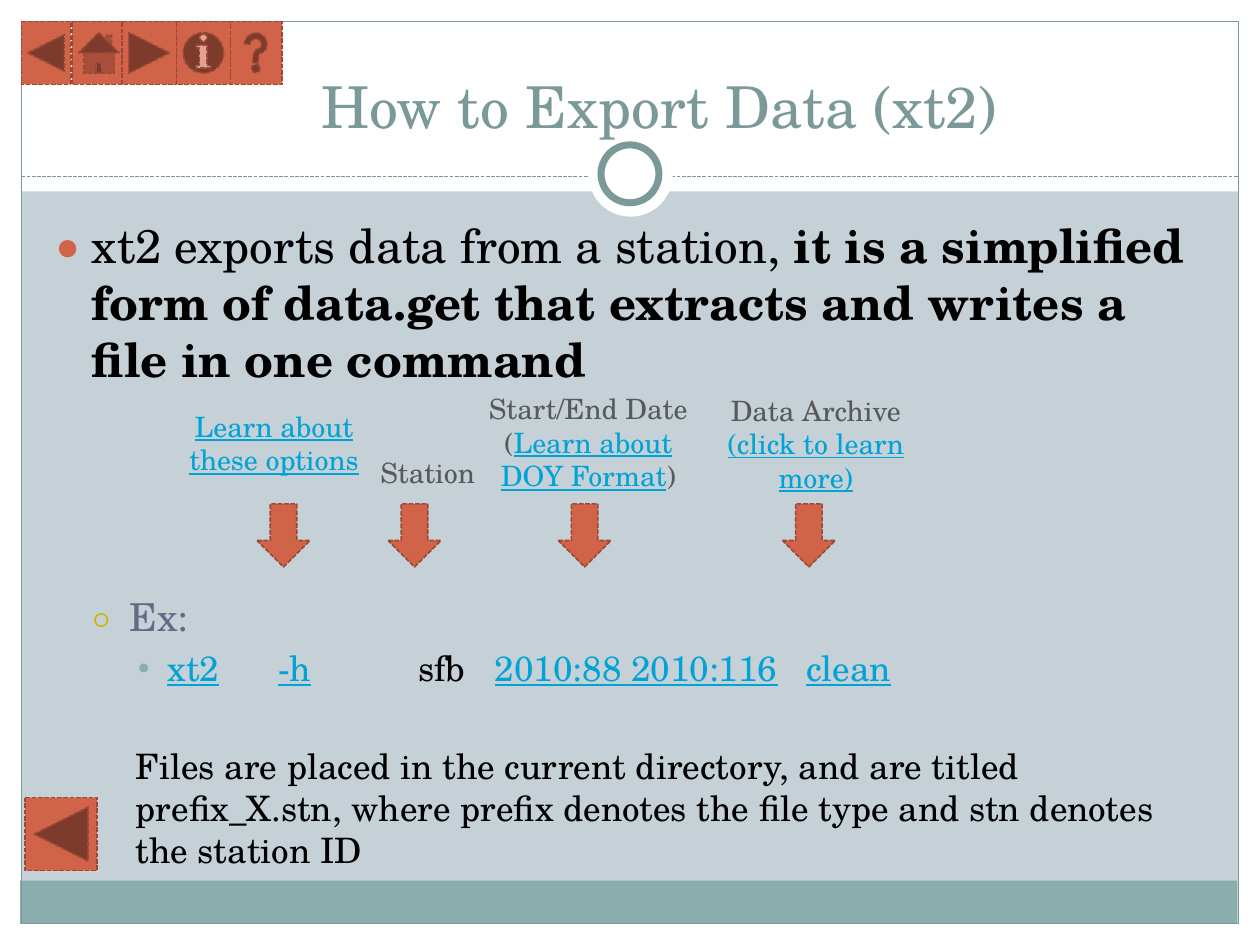
import lxml.etree
import pptx
import pptx.util
import pptx.dml.color
import pptx.enum.dml
import pptx.enum.shapes
import pptx.enum.text
import pptx.oxml.ns
from dataclasses import dataclass

Inches, Pt = pptx.util.Inches, pptx.util.Pt
SHAPE = pptx.enum.shapes.MSO_SHAPE
ANCHOR = pptx.enum.text.MSO_ANCHOR
ALIGN = pptx.enum.text.PP_ALIGN
DASH = pptx.enum.dml.MSO_LINE.SQUARE_DOT
TAB = "\t"


@dataclass(frozen=True)
class Theme:
    font: str = "TeX Gyre Schola"
    back: str = "C5D1D7"
    white: str = "FFFFFF"
    black: str = "000000"
    teal: str = "7C999A"
    band: str = "8CADAE"
    accent: str = "D16349"
    accent_edge: str = "9B4936"
    yellow: str = "CCB400"
    slate: str = "646B86"
    grey: str = "595959"
    link: str = "00A3D6"
    title: int = 33
    lead: int = 27
    sub: int = 22
    text: int = 20
    label: int = 16


def rgb(value):
    return pptx.dml.color.RGBColor.from_string(value)


def assign(target, values):
    for name, value in values.items():
        setattr(target, name, value)


def add_xml(parent, tag, **attributes):
    values = {name: str(value) for name, value in attributes.items()}
    return lxml.etree.SubElement(parent, pptx.oxml.ns.qn(tag), values)


class Builder:
    def __init__(self, page, theme):
        self.page, self.theme = page, theme
        page.background.fill.solid()
        page.background.fill.fore_color.rgb = rgb(theme.back)

    def stroke(self, line, color, width, dash=None):
        line.color.rgb = rgb(color)
        assign(line, {"width": Pt(width), "dash_style": dash})

    def shape(self, kind, at, fill=None, edge=None, width=0.75, dash=None):
        box = self.page.shapes.add_shape(kind, *map(Inches, at))
        box.shadow.inherit = False
        if fill:
            box.fill.solid()
            box.fill.fore_color.rgb = rgb(fill)
        else:
            box.fill.background()
        if edge:
            self.stroke(box.line, edge, width, dash)
        else:
            box.line.fill.background()

    def accent(self, kind, *at):
        self.shape(kind, at, self.theme.accent, self.theme.accent_edge, 0.9, DASH)

    def rule(self, left, right, y):
        line = self.page.shapes.add_connector(
            pptx.enum.shapes.MSO_CONNECTOR.STRAIGHT,
            *map(Inches, (left, y, right, y)))
        self.stroke(line.line, self.theme.teal, 0.75, DASH)
        add_xml(line._element.spPr, "a:effectLst")

    def text(self, at, paragraphs, size, color, align=ALIGN.CENTER, anchor=ANCHOR.TOP):
        """Each paragraph is (spans, options); a span is text or (text, format)."""
        frame = self.page.shapes.add_textbox(*map(Inches, at)).text_frame
        assign(frame, {"word_wrap": True, "vertical_anchor": anchor})
        for index, (spans, options) in enumerate(paragraphs):
            para = frame.paragraphs[0] if index == 0 else frame.add_paragraph()
            assign(para, {"alignment": align, "space_before": Pt(options.get("before", 0))})
            self.layout(para, **options)
            for item in spans:
                words, style = (item, {}) if isinstance(item, str) else item
                span = para.add_run()
                span.text = words
                assign(span.font, {"name": self.theme.font,
                                   "size": Pt(options.get("size", size)),
                                   "bold": style.get("bold", False),
                                   "underline": style.get("underline", False)})
                span.font.color.rgb = rgb(style.get("color", options.get("color", color)))

    def layout(self, para, indent=0, hang=0, bullet=None, tabs=(), **_):
        """Set indents, bullet (mark, colour, percent) and tab stops."""
        props = para._p.get_or_add_pPr()
        props.set("marL", str(Inches(indent)))
        props.set("indent", str(-Inches(hang)))
        if bullet:
            mark, color, percent = bullet
            add_xml(add_xml(props, "a:buClr"), "a:srgbClr", val=color)
            add_xml(props, "a:buSzPct", val=percent * 1000)
            add_xml(props, "a:buFont", typeface=self.theme.font)
            add_xml(props, "a:buChar", char=mark)
        if tabs:
            stops = add_xml(props, "a:tabLst")
            for stop in tabs:
                add_xml(stops, "a:tab", pos=Inches(stop), algn="l")


def draw_frame(build):
    theme = build.theme
    for at in ((0, 7.33, 10, 0.17), (0, 0, 10, 1.52),
               (0, 0, 0.17, 7.5), (9.83, 0, 0.17, 7.5)):
        build.shape(SHAPE.RECTANGLE, at, theme.white)
    build.shape(SHAPE.RECTANGLE, (0.16, 6.99, 9.66, 0.34), theme.band)
    build.shape(SHAPE.RECTANGLE, (0.17, 0.17, 9.66, 7.16), edge=theme.teal)
    build.rule(0.17, 9.83, 1.4)
    build.shape(SHAPE.OVAL, (4.67, 1.05, 0.67, 0.67), theme.white)
    build.shape(SHAPE.OVAL, (4.77, 1.15, 0.46, 0.46), theme.white, theme.teal, 4)


def draw_body(build, link):
    theme = build.theme
    build.text((0.57, 0.33, 9.33, 0.83), [(["How to Export Data (xt2)"], {})],
               theme.title, theme.teal, anchor=ANCHOR.BOTTOM)
    lead = ["xt2 exports data from a station, ",
            ("it is a simplified form of data.get that extracts and writes "
             "a file in one command", {"bold": True})]
    command = [("xt2", link), TAB, ("-h", link), TAB + "sfb" + TAB,
               ("2010:88 2010:116", link), TAB, ("clean", link)]
    note = ("Files are placed in the current directory, and are titled prefix_X.stn, "
            "where prefix denotes the file type and stn denotes the station ID")
    build.text((0.33, 1.67, 9.3, 5), [
        (lead, {"indent": 0.3, "hang": 0.3, "before": 5.4, "size": theme.lead,
                "bullet": ("●", theme.accent, 85)}),
        (["Ex:"], {"indent": 0.6, "hang": 0.3, "before": 118, "size": theme.sub,
                   "color": theme.slate, "bullet": ("○", theme.yellow, 70)}),
        (command, {"indent": 0.9, "hang": 0.25, "before": 4,
                   "bullet": ("•", theme.band, 75), "tabs": (1.78, 2.89, 3.5, 5.97)}),
        ([note], {"indent": 0.65, "before": 32}),
    ], theme.text, theme.black, ALIGN.LEFT)


def draw_labels(build, link):
    labels = [
        (2.04, (1.34, 3.2, 1.67, 0.91), [[("Learn about these options", link)]]),
        (3.08, (2.56, 3.57, 1.67, 0.64), [["Station"]]),
        (4.43, (3.67, 3.06, 2, 1.18),
         [["Start/End Date"], ["(", ("Learn about DOY Format", link), ")"]]),
        (6.21, (5.53, 3.07, 1.89, 1.18),
         [["Data Archive"], [("(click to learn more)", link)]]),
    ]
    for arrow_left, at, lines in labels:
        build.accent(SHAPE.DOWN_ARROW, arrow_left, 4, 0.42, 0.5)
        build.text(at, [(spans, {}) for spans in lines],
                   build.theme.label, build.theme.grey)


def draw_navigation(build):
    build.accent(SHAPE.ACTION_BUTTON_BACK_OR_PREVIOUS, 0.2, 6.33, 0.57, 0.58)
    for kind, left, width in (
            (SHAPE.ACTION_BUTTON_BACK_OR_PREVIOUS, 0.17, 0.39),
            (SHAPE.ACTION_BUTTON_HOME, 0.57, 0.43),
            (SHAPE.ACTION_BUTTON_FORWARD_OR_NEXT, 0.97, 0.43),
            (SHAPE.ACTION_BUTTON_HELP, 1.82, 0.42),
            (SHAPE.ACTION_BUTTON_INFORMATION, 1.4, 0.43)):
        build.accent(kind, left, 0.17, width, 0.5)


def main():
    deck = pptx.Presentation()
    assign(deck, {"slide_width": Inches(10), "slide_height": Inches(7.5)})
    build = Builder(deck.slides.add_slide(deck.slide_layouts[6]), Theme())
    link = {"color": build.theme.link, "underline": True}
    draw_frame(build)
    draw_body(build, link)
    draw_labels(build, link)
    draw_navigation(build)
    deck.save("out.pptx")


if __name__ == "__main__":
    main()
